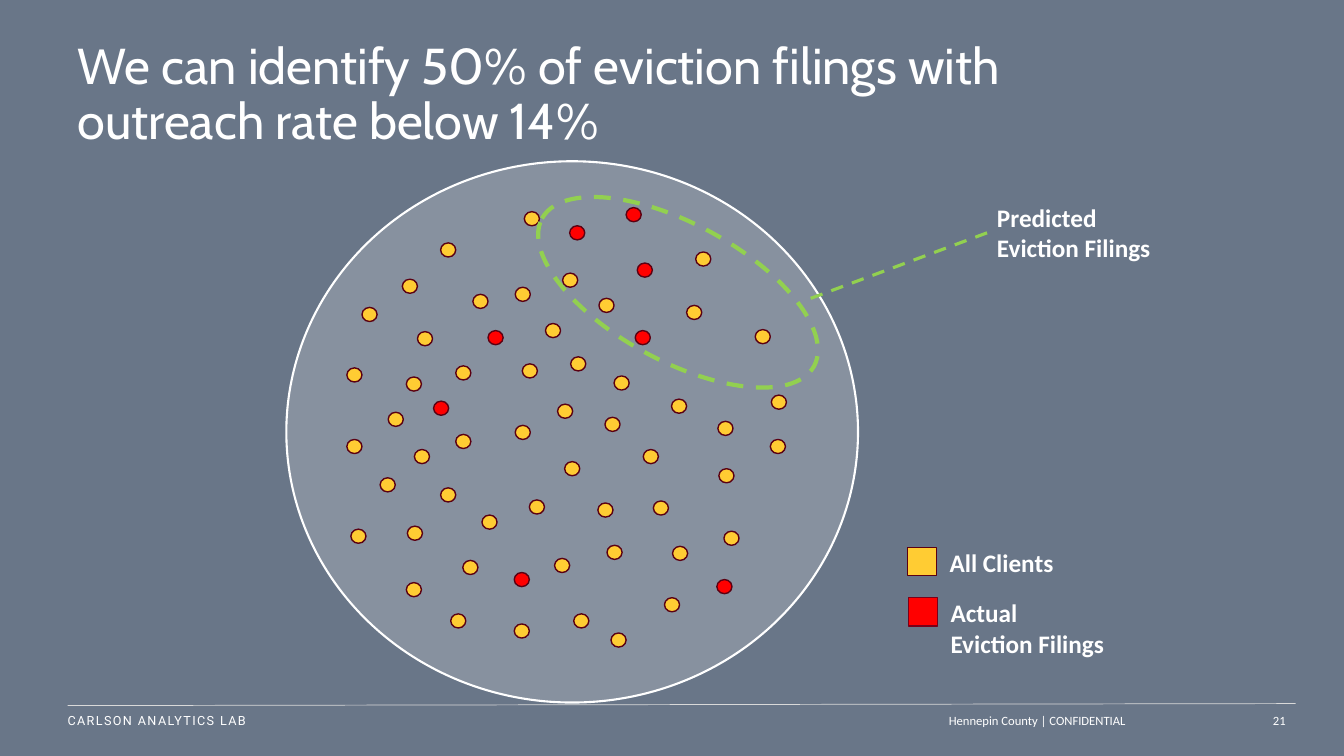
import pptx
import pptx.util
import pptx.dml.color
import pptx.enum.dml
import pptx.enum.shapes
import pptx.enum.text
import pptx.oxml.ns
import pptx.oxml.xmlchemy

Inches = pptx.util.Inches
Pt = pptx.util.Pt
RGBColor = pptx.dml.color.RGBColor
OxmlElement = pptx.oxml.xmlchemy.OxmlElement
MSO_SHAPE = pptx.enum.shapes.MSO_SHAPE
MSO_ANCHOR = pptx.enum.text.MSO_ANCHOR
PP_ALIGN = pptx.enum.text.PP_ALIGN
DASH = pptx.enum.dml.MSO_LINE.DASH

SLATE = RGBColor(0x69, 0x76, 0x88)
WHITE = RGBColor(0xFF, 0xFF, 0xFF)
GREY = RGBColor(0xD9, 0xD9, 0xD9)
GOLD = RGBColor(0xFF, 0xCC, 0x33)
RED = RGBColor(0xFF, 0x00, 0x00)
MAROON = RGBColor(0x5A, 0x00, 0x12)
BRIGHT_MAROON = RGBColor(0x7A, 0x00, 0x19)
GREEN = RGBColor(0x92, 0xD0, 0x50)

DOT_SIZE = (0.15, 0.14)
SWATCH_SIZE = (0.29, 0.28)

# Dot offsets from the top left corner of the population circle, in inches
CLIENT_DOTS = [
    (1.53, 0.81), (2.74, 1.11), (2.36, 0.5), (3.1, 1.36), (0.6, 2.05), (2.85, 4.49),
    (0.75, 1.45), (1.63, 4.49), (2.27, 1.25), (1.85, 1.32), (2.82, 1.94), (4.06, 0.9),
    (1.01, 2.49), (1.75, 3.96), (3.18, 3.81), (2.57, 1.61), (1.19, 2.14), (2.34, 2.01),
    (3.25, 2.13), (4.81, 2.32), (3.64, 3.37), (3.97, 1.43), (0.64, 3.65), (1.3, 1.69),
    (2.69, 2.41), (2.27, 2.62), (3.16, 2.54), (2.41, 3.36), (4.28, 2.58), (3.75, 4.33),
    (4.34, 3.67), (0.93, 3.14), (1.19, 4.18), (1.68, 2.03), (2.76, 2.98), (3.82, 2.36),
    (1.27, 2.86), (3.09, 3.39), (2.66, 3.94), (4.65, 1.67), (2.26, 4.59), (0.6, 2.76),
    (1.68, 2.71), (3.54, 2.86), (4.8, 2.76), (1.15, 1.17), (1.53, 3.24), (1.94, 3.51),
    (1.2, 3.62), (3.83, 3.82), (3.22, 4.68), (4.29, 3.05),
]
EVICTION_DOTS = [
    (2.26, 4.08), (3.37, 0.46), (3.46, 1.68), (4.27, 4.15),
    (3.48, 1.01), (2, 1.68), (2.81, 0.64), (1.46, 2.38),
]


def add_text(slide, box, lines, font, size, bold=False, align=PP_ALIGN.LEFT,
             anchor=MSO_ANCHOR.TOP, left_inset=0.1, line_spacing=None):
    text_box = slide.shapes.add_textbox(*map(Inches, box))
    frame = text_box.text_frame
    frame.word_wrap = True
    frame.vertical_anchor = anchor
    frame.margin_left = Inches(left_inset)
    frame.text = "\n".join(lines)
    for paragraph in frame.paragraphs:
        paragraph.alignment = align
        paragraph.line_spacing = line_spacing
        paragraph.font.name = font
        paragraph.font.size = Pt(size)
        paragraph.font.bold = bold
        paragraph.font.color.rgb = WHITE
    return text_box


def add_figure(slide, kind, box, fill, line, width):
    shape = slide.shapes.add_shape(kind, *map(Inches, box))
    shape.shadow.inherit = False
    if fill is None:
        shape.fill.background()
    else:
        shape.fill.solid()
        shape.fill.fore_color.rgb = fill
    shape.line.color.rgb = line
    shape.line.width = Pt(width)
    return shape


def add_line(slide, start, end, color, width):
    connector = slide.shapes.add_connector(
        pptx.enum.shapes.MSO_CONNECTOR.STRAIGHT, *map(Inches, start + end))
    connector.line.color.rgb = color
    connector.line.width = Pt(width)
    connector._element.spPr.append(OxmlElement("a:effectLst"))
    return connector


def add_title(slide, box):
    add_text(slide, box,
             ["We can identify 50% of eviction filings with outreach rate below 14%"],
             "Cabin", 36, anchor=MSO_ANCHOR.MIDDLE, line_spacing=0.9)


def add_footer(slide, box):
    left, top, width, height = box
    right = left + width
    middle = MSO_ANCHOR.MIDDLE
    lab = add_text(slide, (left, top, 3.24, height), ["CARLSON ANALYTICS LAB"],
                   "Roboto", 9, anchor=middle, left_inset=0)
    # Letter spacing of one point
    lab.text_frame.paragraphs[0].runs[0]._r.get_or_add_rPr().set("spc", "100")
    add_line(slide, (left, top + 0.02), (right, top), GREY, 0.5)
    add_text(slide, (left + 4.65, top, 5.94, height), ["Hennepin County | CONFIDENTIAL"],
             "Calibri", 9, align=PP_ALIGN.RIGHT, anchor=middle)
    add_text(slide, (right - 0.45, top, 0.45, height), ["21"],
             "Calibri", 9, align=PP_ALIGN.RIGHT, anchor=middle, left_inset=0)


def add_population(slide, box):
    left, top = box[:2]
    circle = add_figure(slide, MSO_SHAPE.OVAL, box, WHITE, WHITE, 1.5)
    # Circle fill at 20% opacity
    color = circle._element.spPr.find(".//" + pptx.oxml.ns.qn("a:srgbClr"))
    alpha = OxmlElement("a:alpha")
    alpha.set("val", "20000")
    color.append(alpha)
    for dots, fill in ((CLIENT_DOTS, GOLD), (EVICTION_DOTS, RED)):
        for x, y in dots:
            add_figure(slide, MSO_SHAPE.OVAL, (left + x, top + y) + DOT_SIZE,
                       fill, MAROON, 1)


def add_prediction(slide, box):
    left, top = box[:2]
    region = add_figure(slide, MSO_SHAPE.OVAL, box, None, GREEN, 3)
    region.rotation = 28.5
    region.line.dash_style = DASH
    # Leader line and its label
    label_left = left + 4.6
    leader = add_line(slide, (label_left, top + 0.09), (left + 2.77, top + 0.77),
                      GREEN, 2.25)
    leader.line.dash_style = DASH
    add_text(slide, (label_left, top - 0.26, 2.2, 0.71),
             ["Predicted", "Eviction Filings"], "Calibri", 18, bold=True)


def add_legend(slide, box):
    left, top, width = box[:3]
    entries = [
        (["All Clients"], GOLD, MAROON, 0.4),
        (["Actual", "Eviction Filings"], RED, BRIGHT_MAROON, 0.71),
    ]
    for index, (lines, fill, outline, label_height) in enumerate(entries):
        x, y = left + 0.01 * index, top + 0.5 * index
        add_figure(slide, MSO_SHAPE.RECTANGLE, (x, y + 0.05) + SWATCH_SIZE,
                   fill, outline, 1)
        add_text(slide, (x + 0.32, y, width - 0.32, label_height), lines,
                 "Calibri", 18, bold=True)


def main():
    presentation = pptx.Presentation()
    presentation.slide_width = Inches(13.33)
    presentation.slide_height = Inches(7.5)
    slide = presentation.slides.add_slide(presentation.slide_layouts[6])
    slide.background.fill.solid()
    slide.background.fill.fore_color.rgb = SLATE

    add_footer(slide, (0.67, 6.98, 12.18, 0.33))
    add_population(slide, (2.84, 1.6, 5.67, 5.37))
    add_prediction(slide, (5.19, 2.22, 3.07, 1.36))
    add_legend(slide, (9, 5.38, 2.52, 1.21))
    add_title(slide, (0.67, 0.4, 11.2, 1.1))
    presentation.save("out.pptx")


if __name__ == "__main__":
    main()
